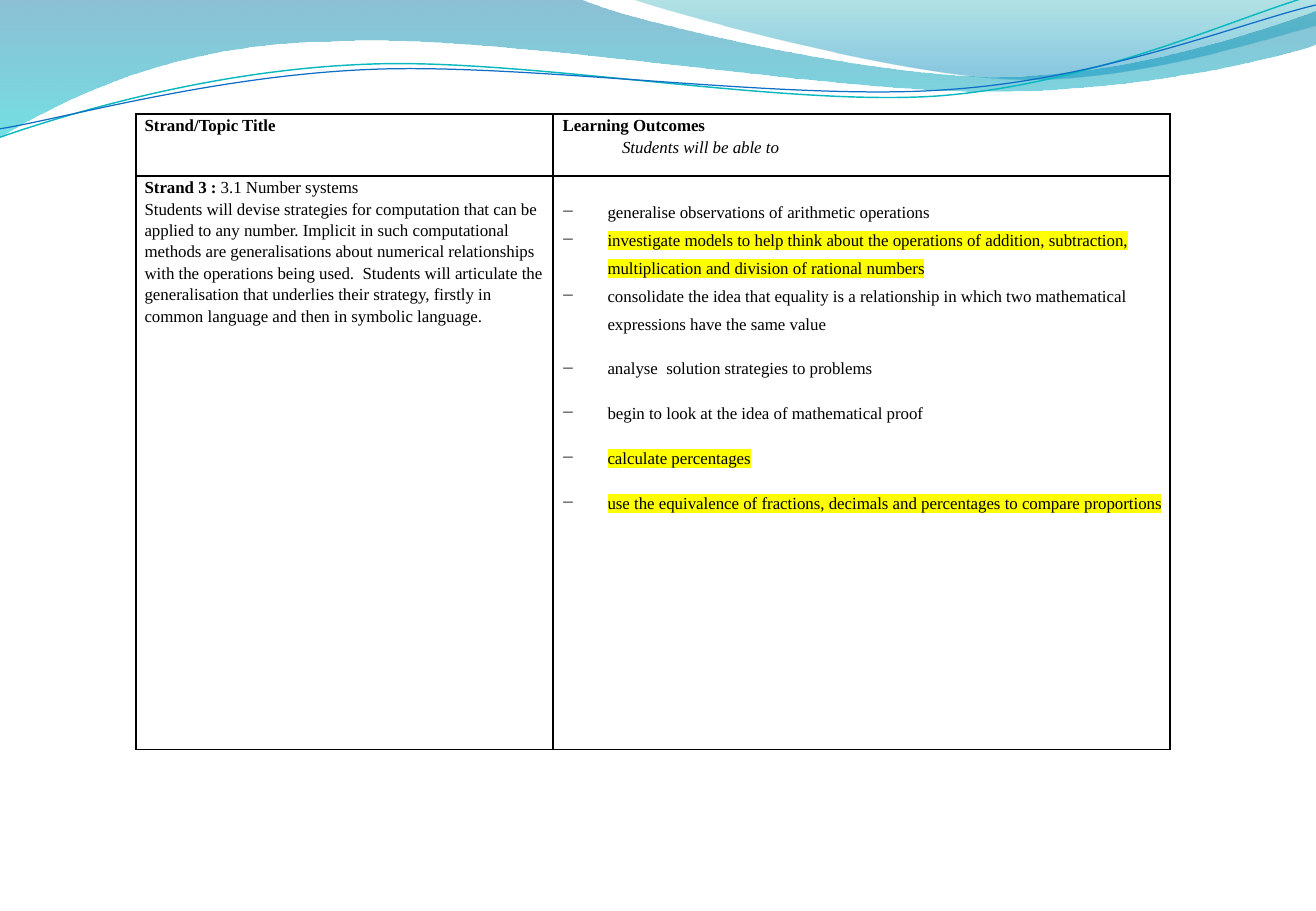
import dataclasses
import math

import lxml.etree
import pptx
import pptx.dml.color
import pptx.enum.text
import pptx.oxml.ns
import pptx.util

Inches = pptx.util.Inches
qn = pptx.oxml.ns.qn


@dataclasses.dataclass(frozen=True)
class Theme:
    font: str = "Times New Roman"
    body_size: float = 10
    ink: str = "000000"
    highlight: str = "FFFF00"
    border_width: float = 1
    lower_wave: tuple = ((0, "0074A1", 45), (1, "00C6CF", 55))
    upper_wave: tuple = ((0, "00A1A9", 30), (0.8, "008BBF", 45))
    teal_strand: tuple = ("0AB8BF", 0.85)
    blue_strand: tuple = ("0F6FC6", 0.75)


THEME = Theme()
STRAND_TILT = 357.3
STRAND_CENTRE = (5.41, 0.58)

LOWER_WAVE = [
    (0, -0.01), (4.77, -0.01),
    (5.15, 0.17, 7.19, 0.63, 8.22, 0.63), (9.24, 0.63, 10.38, 0.26, 10.83, 0.09),
    (10.85, 0.36),
    (10.65, 0.44, 9.42, 0.76, 8.08, 0.75), (6.74, 0.75, 4.14, 0.28, 2.79, 0.34),
    (1.4, 0.35, 0.5, 0.83, -0.01, 1.13), (0, -0.01),
]
UPPER_WAVE = [
    (5.19, -0.01),
    (5.52, 0.11, 7.39, 0.62, 8.33, 0.65), (9.27, 0.69, 10.42, 0.32, 10.83, 0.21),
    (10.83, 0), (5.19, -0.01),
]
TEAL_STRAND = [
    (0, 1.13),
    (0.52, 0.95, 1.71, 0.58, 3, 0.53), (4.28, 0.47, 6.42, 0.88, 7.72, 0.79),
    (9.02, 0.69, 10.17, 0.14, 10.81, -0.04),
]
BLUE_STRAND = [
    (0, 1.06),
    (0.51, 0.98, 1.77, 0.62, 3.07, 0.57), (4.36, 0.52, 6.47, 0.83, 7.76, 0.74),
    (9.06, 0.66, 10.2, 0.19, 10.83, 0.04),
]

BOLD = {"bold": True}
ITALIC = {"italic": True}
STRATEGY = (
    "Students will devise strategies for computation that can be applied to any number. "
    "Implicit in such computational methods are generalisations about numerical "
    "relationships with the operations being used.  Students will articulate the "
    "generalisation that underlies their strategy, firstly in common language and then "
    "in symbolic language."
)
OUTCOMES = [
    ("generalise observations of arithmetic operations", False, 0),
    ("investigate models to help think about the operations of addition, subtraction, "
     "multiplication and division of rational numbers", True, 0),
    ("consolidate the idea that equality is a relationship in which two mathematical "
     "expressions have the same value", False, 10),
    ("analyse  solution strategies to problems", False, 10),
    ("begin to look at the idea of mathematical proof", False, 10),
    ("calculate percentages", True, 10),
    ("use the equivalence of fractions, decimals and percentages to compare proportions",
     True, 10),
]


def apply_formats(target, formats):
    for name, value in formats.items():
        setattr(target, name, value)


def rgb(value):
    return pptx.dml.color.RGBColor.from_string(value)


def turn(point, degrees):
    angle = math.radians(degrees)
    x, y = (value - centre for value, centre in zip(point, STRAND_CENTRE))
    return (STRAND_CENTRE[0] + x * math.cos(angle) - y * math.sin(angle),
            STRAND_CENTRE[1] + x * math.sin(angle) + y * math.cos(angle))


def add_outline(slide, box, segments, closed, tilt=0):
    left, top = box
    corners = [pair for segment in segments for pair in zip(segment[::2], segment[1::2])]
    points = [(Inches(left + x), Inches(top + y))
              for x, y in (turn(corner, -tilt) for corner in corners)]
    builder = slide.shapes.build_freeform(*points[0])
    builder.add_line_segments(points[1:], close=closed)
    outline = builder.convert_to_shape()
    apply_formats(outline, {"rotation": tilt})
    outline.shadow.inherit = False
    steps = iter(list(outline.element.spPr.iter(qn("a:lnTo"))))
    for segment in segments[1:]:
        step = next(steps)
        if len(segment) == 6:
            curve = lxml.etree.Element(qn("a:cubicBezTo"))
            step.addprevious(curve)
            for control in (step, next(steps), next(steps)):
                curve.append(control[0])
                control.getparent().remove(control)
    return outline


def add_wave_header(slide, box):
    for segments, stops in ((LOWER_WAVE, THEME.lower_wave), (UPPER_WAVE, THEME.upper_wave)):
        wave = add_outline(slide, box, segments, True)
        wave.line.fill.background()
        wave.fill.gradient()
        wave.fill.gradient_angle = 270
        tints = wave.element.spPr.iter(qn("a:gs"))
        for stop, tint, (position, colour, opacity) in zip(
            wave.fill.gradient_stops, tints, stops
        ):
            stop.position = position
            stop.color.rgb = rgb(colour)
            lxml.etree.SubElement(tint[0], qn("a:alpha"), val=str(opacity * 1000))
    for segments, (colour, width) in (
        (TEAL_STRAND, THEME.teal_strand), (BLUE_STRAND, THEME.blue_strand)
    ):
        strand = add_outline(slide, box, segments, False, STRAND_TILT)
        strand.fill.background()
        strand.line.color.rgb = rgb(colour)
        strand.line.width = pptx.util.Pt(width)


def add_borders(cell):
    cell.fill.background()
    properties = cell._tc.get_or_add_tcPr()
    for index, side in enumerate(("lnL", "lnR", "lnT", "lnB")):
        border = lxml.etree.Element(
            qn("a:" + side), w=str(pptx.util.Pt(THEME.border_width))
        )
        fill = lxml.etree.SubElement(border, qn("a:solidFill"))
        lxml.etree.SubElement(fill, qn("a:srgbClr"), val=THEME.ink)
        properties.insert(index, border)


def write_paragraph(paragraph, runs, spacing=1.15, after=0, margin=0, hanging=0,
                    bullet=None, highlighted=False):
    apply_formats(paragraph, {"line_spacing": spacing, "space_after": pptx.util.Pt(after)})
    properties = paragraph._p.get_or_add_pPr()
    properties.set("marL", str(Inches(margin)))
    properties.set("indent", str(Inches(-hanging)))
    if bullet:
        lxml.etree.SubElement(properties, qn("a:buChar"), char=bullet)
    for text, formats in runs:
        run = paragraph.add_run()
        run.text = text
        apply_formats(run.font, {
            "name": THEME.font, "size": pptx.util.Pt(THEME.body_size),
            "bold": False, "italic": False, **formats,
        })
        run.font.color.rgb = rgb(THEME.ink)
        if highlighted:
            marker = lxml.etree.Element(qn("a:highlight"))
            lxml.etree.SubElement(marker, qn("a:srgbClr"), val=THEME.highlight)
            run._r.rPr.find(qn("a:solidFill")).addnext(marker)


def fill_cell(cell, paragraphs, top=0):
    apply_formats(cell, {
        "margin_left": Inches(0.07), "margin_right": Inches(0.06),
        "margin_top": Inches(top), "margin_bottom": 0,
        "vertical_anchor": pptx.enum.text.MSO_ANCHOR.TOP,
    })
    add_borders(cell)
    frame = cell.text_frame
    for index, content in enumerate(paragraphs):
        paragraph = frame.add_paragraph() if index else frame.paragraphs[0]
        write_paragraph(paragraph, **content)


def add_syllabus_table(slide, box):
    syllabus = slide.shapes.add_table(2, 2, *map(Inches, box)).table
    apply_formats(syllabus, {"first_row": False, "horz_banding": False})
    left_width, header_height = 3.43, 0.51
    for column, width in zip(syllabus.columns, (left_width, box[2] - left_width)):
        column.width = Inches(width)
    for row, height in zip(syllabus.rows, (header_height, box[3] - header_height)):
        row.height = Inches(height)
    fill_cell(syllabus.cell(0, 0), [{"runs": [("Strand/Topic Title", BOLD)]}])
    fill_cell(syllabus.cell(0, 1), [
        {"runs": [("Learning Outcomes", BOLD)], "margin": 0.01},
        {"runs": [("Students will be able to", ITALIC)], "margin": 0.5},
    ])
    fill_cell(syllabus.cell(1, 0), [
        {"runs": [("Strand 3 : ", BOLD), ("3.1 Number systems", {})]},
        {"runs": [(STRATEGY, {})]},
    ])
    fill_cell(syllabus.cell(1, 1), [
        {"runs": [(outcome, {})], "spacing": 1.5, "after": after, "margin": 0.38,
         "hanging": 0.38, "bullet": "−", "highlighted": highlighted}
        for outcome, highlighted, after in OUTCOMES
    ], top=0.15)


def main():
    presentation = pptx.Presentation()
    apply_formats(presentation, {
        "slide_width": Inches(10.83), "slide_height": Inches(7.5),
    })
    slide = presentation.slides.add_slide(presentation.slide_layouts[6])
    add_wave_header(slide, (0, 0))
    add_syllabus_table(slide, (1.12, 0.94, 8.51, 5.23))
    presentation.save("out.pptx")


if __name__ == "__main__":
    main()
